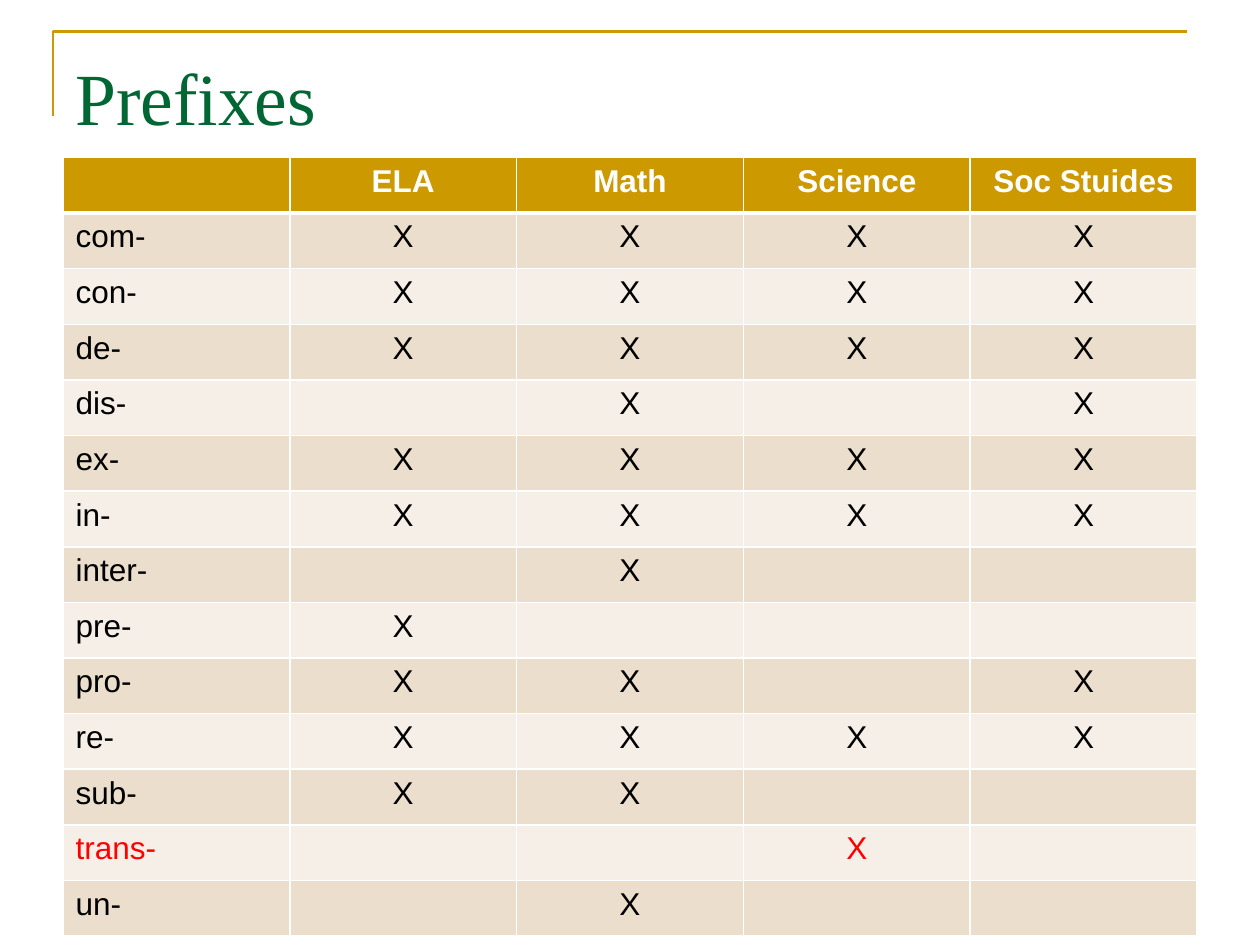
"""Builds a slide with a table of the prefixes used in each school subject."""
import lxml.etree
import pptx
import pptx.dml.color
import pptx.enum.text
import pptx.oxml.ns
import pptx.util

THEME = {
    "gold": "CC9900", "green": "006633", "white": "FFFFFF", "black": "000000",
    "red": "FF0000", "bands": ("ECDECC", "F6EFE7"),
    "title_font": "Times New Roman", "body_font": "Arial",
    "title_size": 42, "body_size": 18, "rule": 1.5, "thin": 1, "thick": 3,
}
ALIGN = pptx.enum.text.PP_ALIGN
SUBJECTS = ("ELA", "Math", "Science", "Soc Stuides")
PREFIXES = {
    "com-": "XXXX", "con-": "XXXX", "de-": "XXXX", "dis-": " X X",
    "ex-": "XXXX", "in-": "XXXX", "inter-": " X  ", "pre-": "X   ",
    "pro-": "XX X", "re-": "XXXX", "sub-": "XX  ", "trans-": "  X ",
    "un-": " X  ",
}


def write(frame, text, font=THEME["body_font"], size=THEME["body_size"],
          color=THEME["black"], bold=False, align=ALIGN.LEFT):
    """Write one formatted run into a text frame."""
    para = frame.paragraphs[0]
    para.alignment = align
    span = para.add_run()
    span.text = text
    span.font.name = font
    span.font.size = pptx.util.Pt(size)
    span.font.bold = bold
    span.font.color.rgb = pptx.dml.color.RGBColor.from_string(color)


def border(cell, side, points):
    """Add a solid white border to one side of a cell."""
    name = pptx.oxml.ns.qn
    line = lxml.etree.SubElement(cell._tc.get_or_add_tcPr(), name(f"a:ln{side}"),
                                 w=str(pptx.util.Pt(points)))
    fill = lxml.etree.SubElement(line, name("a:solidFill"))
    lxml.etree.SubElement(fill, name("a:srgbClr"), val=THEME["white"])


deck = pptx.Presentation()
deck.slide_width = pptx.util.Inches(10)
deck.slide_height = pptx.util.Inches(7.5)
page = deck.slides.add_slide(deck.slide_layouts[6])
column = deck.slide_width // 20
row = deck.slide_height // 30

left, top = int(column * 0.84), row
builder = page.shapes.build_freeform(left, int(row * 3.68))
builder.add_line_segments([(left, top), (left + 18 * column, top)], close=False)
corner = builder.convert_to_shape()
corner.shadow.inherit = False
corner.fill.background()
corner.line.color.rgb = pptx.dml.color.RGBColor.from_string(THEME["gold"])
corner.line.width = pptx.util.Pt(THEME["rule"])

box = page.shapes.add_textbox(column, int(row * 1.2), 18 * column, 5 * row)
box.text_frame.word_wrap = True
box.text_frame.margin_top = pptx.util.Inches(0.11)
write(box.text_frame, "Prefixes", font=THEME["title_font"],
      size=THEME["title_size"], color=THEME["green"])

lines = [("", *SUBJECTS)] + [(prefix, *marks) for prefix, marks in PREFIXES.items()]
table = page.shapes.add_table(len(lines), len(lines[0]), column, 5 * row,
                              18 * column, int(row * 24.72)).table
table.horz_banding = False
for i, texts in enumerate(lines):
    header = i == 0
    color = THEME["white"] if header else THEME["red"] if texts[0] == "trans-" else THEME["black"]
    fill = THEME["gold"] if header else THEME["bands"][(i - 1) % 2]
    for j, text in enumerate(texts):
        cell = table.cell(i, j)
        for side in "LRTB":
            heavy = (i, side) in ((0, "B"), (1, "T"))
            border(cell, side, THEME["thick"] if heavy else THEME["thin"])
        cell.fill.solid()
        cell.fill.fore_color.rgb = pptx.dml.color.RGBColor.from_string(fill)
        if text.strip():
            write(cell.text_frame, text, color=color, bold=header,
                  align=ALIGN.CENTER if j else ALIGN.LEFT)

deck.save("out.pptx")
